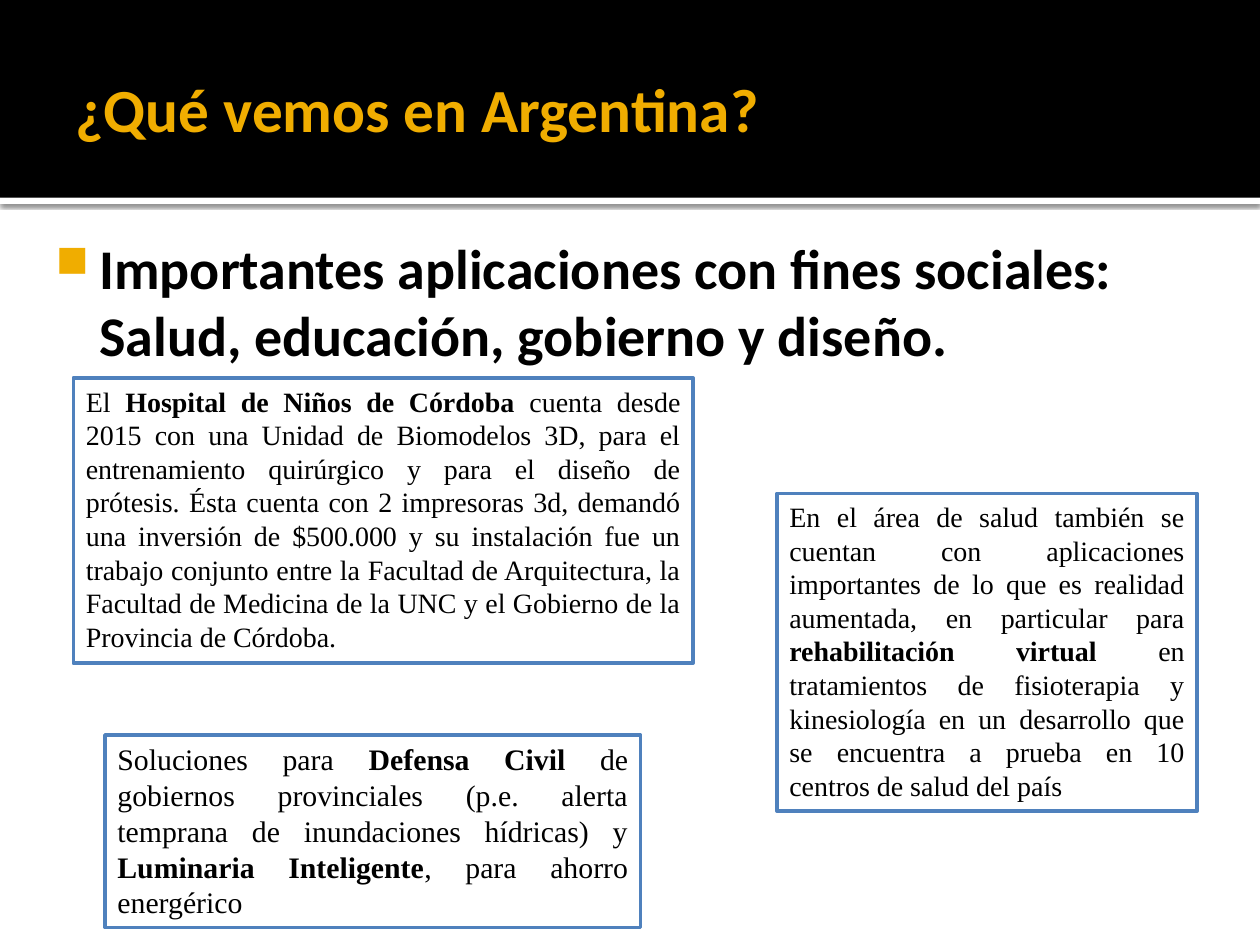
from lxml import etree
from pptx import Presentation
from pptx.dml.color import RGBColor
from pptx.enum import shapes, text
from pptx.oxml import ns
from pptx.util import Pt

# Content: ** marks the start and end of bold words
TITLE = "¿Qué vemos en Argentina?"
LEAD = "Importantes aplicaciones con fines sociales: Salud, educación, gobierno y diseño."
# (left, top, width, height), font size, wording
NOTES = [
    ((42, 216, 354, 163), 16,
     "El **Hospital de Niños de Córdoba** cuenta desde 2015 con una Unidad de "
     "Biomodelos 3D, para el entrenamiento quirúrgico y para el diseño de prótesis. "
     "Ésta cuenta con 2 impresoras 3d, demandó una inversión de $500.000 y su "
     "instalación fue un trabajo conjunto entre la Facultad de Arquitectura, la "
     "Facultad de Medicina de la UNC y el Gobierno de la Provincia de Córdoba."),
    ((444, 282, 240, 181.5), 16,
     "En el área de salud también se cuentan con aplicaciones importantes de lo que "
     "es realidad aumentada, en particular para **rehabilitación virtual **en "
     "tratamientos de fisioterapia y kinesiología en un desarrollo que se encuentra "
     "a prueba en 10 centros de salud del país"),
    ((60, 420, 306, 110), 17,
     "Soluciones para **Defensa Civil** de gobiernos provinciales (p.e. alerta "
     "temprana de inundaciones hídricas) y **Luminaria Inteligente**, para ahorro "
     "energérico"),
]
BLACK, WHITE, GOLD, BLUE = "000000", "FFFFFF", "F0AD00", "4F81BD"


def color(target, value):
    """Colour a fill or a font."""
    if hasattr(target, "solid"):
        target.solid()
        target = target.fore_color
    else:
        target = target.color
    target.rgb = RGBColor.from_string(value)


def place(shape, left, top, width, height):
    shape.left, shape.top = Pt(left), Pt(top)
    shape.width, shape.height = Pt(width), Pt(height)


def set_font(para, name, size, value, bold=None):
    para.font.name, para.font.size, para.font.bold = name, Pt(size), bold
    color(para.font, value)


def set_insets(frame, left, top, right, bottom):
    frame.margin_left, frame.margin_top = Pt(left), Pt(top)
    frame.margin_right, frame.margin_bottom = Pt(right), Pt(bottom)


def add_box(page, area, fill):
    box = page.shapes.add_shape(shapes.MSO_SHAPE.RECTANGLE, *map(Pt, area))
    box.shadow.inherit = False
    color(box.fill, fill)
    box.line.fill.background()
    return box


def add_shadow(box):
    effects = box.element.spPr.find(ns.qn("a:effectLst"))
    shadow = etree.SubElement(effects, ns.qn("a:outerShdw"), blurRad=str(Pt(2.5)),
                              dist=str(Pt(0.8)), dir="5400000", rotWithShape="0")
    shade = etree.SubElement(shadow, ns.qn("a:srgbClr"), val=BLACK)
    etree.SubElement(shade, ns.qn("a:alpha"), val="60000")


def add_bullet(para, mark, value, percent, left, hanging):
    props = para._p.get_or_add_pPr()
    props.set("marL", str(Pt(left)))
    props.set("indent", str(-Pt(hanging)))
    tint = etree.SubElement(props, ns.qn("a:buClr"))
    etree.SubElement(tint, ns.qn("a:srgbClr"), val=value)
    etree.SubElement(props, ns.qn("a:buSzPct"), val=str(percent * 1000))
    etree.SubElement(props, ns.qn("a:buChar"), char=mark)


def add_note(page, area, size, wording):
    box = add_box(page, area, WHITE)
    color(box.line.fill, BLUE)
    box.line.width = Pt(2.25)
    frame = box.text_frame
    frame.word_wrap = True
    frame.auto_size = text.MSO_AUTO_SIZE.SHAPE_TO_FIT_TEXT
    frame.vertical_anchor = text.MSO_ANCHOR.TOP
    para = frame.paragraphs[0]
    para.alignment = text.PP_ALIGN.JUSTIFY
    para.space_after = Pt(10)
    set_font(para, "Times New Roman", size, BLACK)
    for index, words in enumerate(wording.split("**")):
        span = para.add_run()
        span.text = words
        if index % 2:
            span.font.bold = True


def main():
    deck = Presentation()
    deck.slide_width, deck.slide_height = Pt(720), Pt(540)
    page = deck.slides.add_slide(deck.slide_layouts[5])

    # Header band and the strip below it
    add_shadow(add_box(page, (0, 113, 720, 3.6), WHITE))
    add_box(page, (0, 0, 720, 113), BLACK)

    # Title, in front of the band
    title = page.shapes.title
    title.element.getparent().append(title.element)
    place(title, 36, 12.5, 648, 98.5)
    frame = title.text_frame
    frame.text = TITLE
    frame.vertical_anchor = text.MSO_ANCHOR.MIDDLE
    set_insets(frame, 7.2, 3.6, 3.6, 3.6)
    frame.paragraphs[0].alignment = text.PP_ALIGN.LEFT
    set_font(frame.paragraphs[0], "Calibri", 35, GOLD, True)

    # Lead statement
    lead = page.shapes.add_textbox(Pt(18), Pt(126), Pt(702), Pt(396))
    frame = lead.text_frame
    frame.word_wrap = True
    set_insets(frame, 4.3, 7.2, 7.2, 3.6)
    para = frame.paragraphs[0]
    para.text = LEAD
    set_font(para, "Calibri", 32, BLACK, True)
    add_bullet(para, "■", GOLD, 80, 34.5, 25)

    # Framed notes
    for area, size, wording in NOTES:
        add_note(page, area, size, wording)

    deck.save("out.pptx")


if __name__ == "__main__":
    main()
